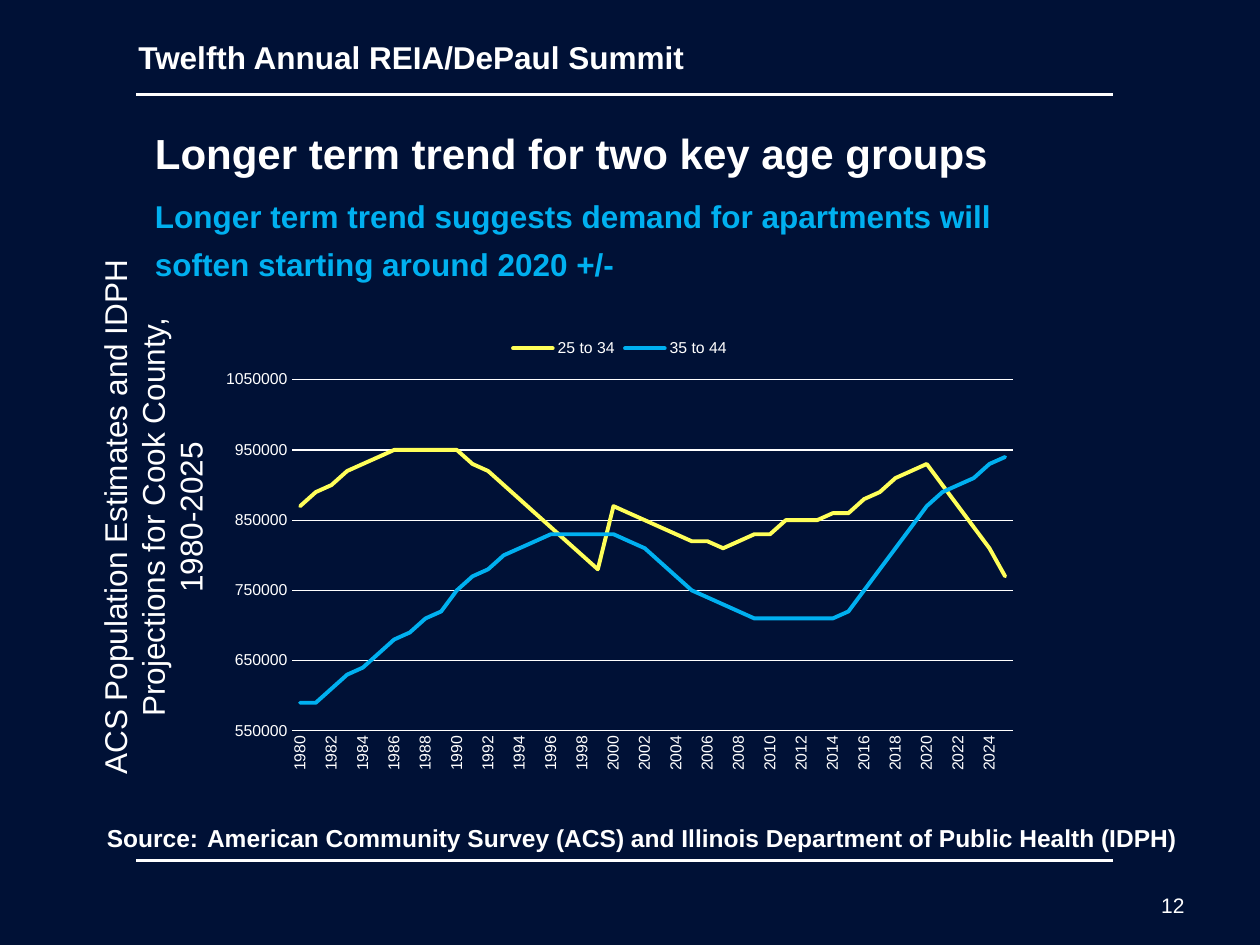
from lxml import etree
from pptx import Presentation
from pptx import util as u
from pptx.chart.data import CategoryChartData
from pptx.dml.color import RGBColor
from pptx.enum import chart as ch, shapes, text
from pptx.oxml import parse_xml
from pptx.oxml.ns import nsdecls, qn

COLORS = {"navy": "001136", "white": "FFFFFF", "blue": "00B0F0", "yellow": "FFFF59"}
Inches = u.Inches


def rgb(name):
    return RGBColor.from_string(COLORS[name])


def add_text(box, paragraphs, frame_format=None, align=None):
    """Each paragraph is (space before, [(words, size, bold, colour), ...])."""
    area = slide.shapes.add_textbox(*[Inches(v) for v in box])
    frame = area.text_frame
    frame.word_wrap = True
    for key, value in (frame_format or {}).items():
        setattr(frame, key, value)
    for i, (space, runs) in enumerate(paragraphs):
        line = frame.paragraphs[0] if i == 0 else frame.add_paragraph()
        line.alignment = align
        if space:
            line.space_before = u.Pt(space)
        for words, size, bold, color in runs:
            run = line.add_run()
            run.text = words
            for key, value in {"name": "Arial", "size": u.Pt(size), "bold": bold}.items():
                setattr(run.font, key, value)
            run.font.color.rgb = rgb(color)
    return area


prs = Presentation()
prs.slide_width, prs.slide_height = Inches(10), Inches(7.5)
slide = prs.slides.add_slide(prs.slide_layouts[6])
slide.background.fill.solid()
slide.background.fill.fore_color.rgb = rgb("navy")

# Title and message
add_text((0.67, 0.92, 7.75, 1.92), [
    (0, [("Longer term trend for two key age groups", 24, True, "white")]),
    (11, [("Longer term trend suggests demand for apartments will", 18, True, "blue")]),
    (6, [("soften starting around 2020 +/-", 18, True, "blue")]),
], {"margin_left": Inches(0.56), "margin_top": Inches(0.09)})

# Header and footer rules
for rule_y in (0.75, 6.83):
    rule = slide.shapes.add_connector(
        shapes.MSO_CONNECTOR.STRAIGHT,
        Inches(1.08), Inches(rule_y), Inches(8.83), Inches(rule_y))
    rule.line.color.rgb = rgb("white")
    rule.line.width = u.Pt(1.5)
    etree.SubElement(rule._element.spPr, qn("a:effectLst"))

# Page number and event name
add_text((7.17, 6.83, 2.33, 0.5), [(0, [("12", 12, False, "white")])],
         {"vertical_anchor": text.MSO_ANCHOR.BOTTOM}, text.PP_ALIGN.RIGHT)
add_text((1, 0.25, 7.92, 0.4),
         [(0, [("Twelfth Annual REIA/DePaul Summit", 18, True, "white")])])

# Population by age group, in thousands
age_groups = {
    "25 to 34": ("yellow", [
        870, 890, 900, 920, 930, 940, 950, 950, 950, 950, 950, 930, 920, 900, 880, 860,
        840, 820, 800, 780, 870, 860, 850, 840, 830, 820, 820, 810, 820, 830, 830, 850,
        850, 850, 860, 860, 880, 890, 910, 920, 930, 900, 870, 840, 810, 770]),
    "35 to 44": ("blue", [
        590, 590, 610, 630, 640, 660, 680, 690, 710, 720, 750, 770, 780, 800, 810, 820,
        830, 830, 830, 830, 830, 820, 810, 790, 770, 750, 740, 730, 720, 710, 710, 710,
        710, 710, 710, 720, 750, 780, 810, 840, 870, 890, 900, 910, 930, 940]),
}
population = CategoryChartData(number_format="General")
population.categories = [str(year) for year in range(1980, 2026)]
for group, (_, thousands) in age_groups.items():
    population.add_series(group, [value * 1000 for value in thousands])
trend = slide.shapes.add_chart(
    ch.XL_CHART_TYPE.LINE, Inches(1.67), Inches(2.58), Inches(6.5), Inches(3.62),
    population).chart
trend.has_title = False
trend.has_legend = True
trend.legend.position = ch.XL_LEGEND_POSITION.TOP
trend.legend.include_in_layout = False
trend.plots[0].vary_by_categories = False
for series in trend.plots[0].series:
    series.smooth = False
    series.format.line.color.rgb = rgb(age_groups[series.name][0])
    series.format.line.width = u.Pt(2.25)
    series.format.line._get_or_add_ln().set("cap", "rnd")

# Axes and chart fonts
years, people = trend.category_axis, trend.value_axis
for font, size in ((trend.font, 10), (trend.legend.font, 9),
                   (years.tick_labels.font, 9), (people.tick_labels.font, 9)):
    font.name, font.size = "Arial", u.Pt(size)
    font.color.rgb = rgb("white")
for axis in (years, people):
    axis.major_tick_mark = axis.minor_tick_mark = ch.XL_TICK_MARK.NONE
for key, value in {"minimum_scale": 550000, "maximum_scale": 1050000,
                   "major_unit": 100000, "has_major_gridlines": True}.items():
    setattr(people, key, value)
for line in (years.format.line, people.major_gridlines.format.line):
    line.color.rgb = rgb("white")
    line.width = u.Pt(0.75)
people.format.line.fill.background()

# Every second year, written upwards
year_xml = years._element
label_body = year_xml.find(qn("c:txPr")).find(qn("a:bodyPr"))
label_body.set("rot", "-5400000")
label_body.set("vert", "horz")
year_xml.find(qn("c:noMultiLvlLbl")).addprevious(
    parse_xml(f'<c:tickLblSkip {nsdecls("c")} val="2"/>'))

# Plot area position
plot_area = trend._chartSpace.chart.plotArea
for old_layout in plot_area.findall(qn("c:layout")):
    plot_area.remove(old_layout)
places = {"layoutTarget": "inner", "xMode": "edge", "yMode": "edge",
          "x": 0.1, "y": 0.12, "w": 0.88, "h": 0.77}
settings = "".join(f'<c:{key} val="{value}"/>' for key, value in places.items())
plot_area.insert(0, parse_xml(
    f'<c:layout {nsdecls("c")}><c:manualLayout>{settings}</c:manualLayout></c:layout>'))

# Vertical chart caption
caption = add_text((-1.1, 3.6, 4.63, 1.01), [
    (0, [("ACS Population Estimates and IDPH Projections for Cook County,", 18, False, "white")]),
    (0, [("1980-2025", 18, False, "white")]),
], align=text.PP_ALIGN.CENTER)
caption.rotation = 270

# Source
add_text((0.75, 6.43, 8.87, 0.4), [(0, [
    ("Source:", 14, True, "white"),
    (" ", 18, True, "white"),
    ("American Community Survey (ACS) and Illinois Department of Public Health (IDPH)",
     14, True, "white"),
])])

prs.save("out.pptx")
